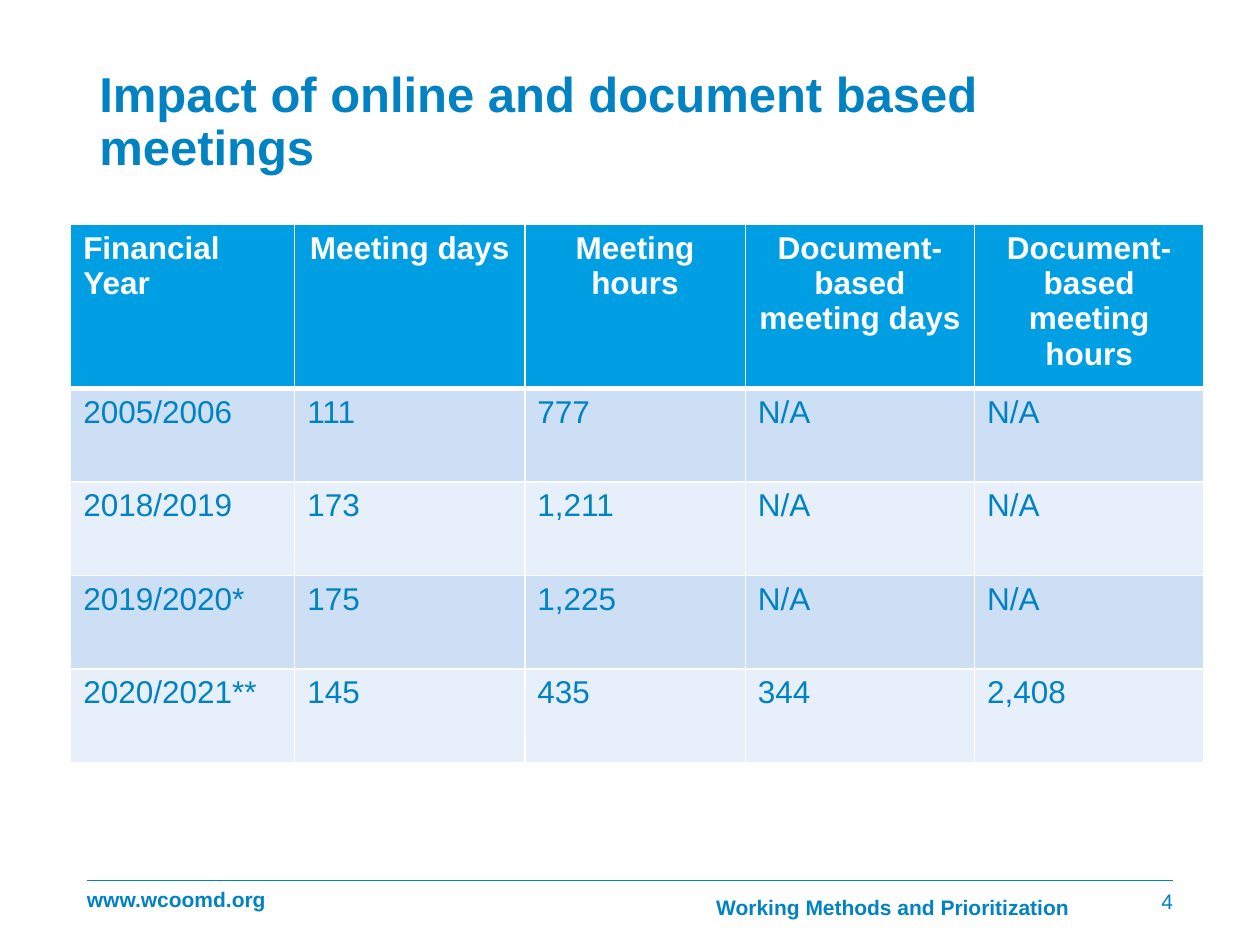
from lxml.etree import SubElement
from pptx import Presentation
from pptx.dml.color import RGBColor
from pptx.enum.shapes import MSO_CONNECTOR
from pptx.enum.text import MSO_ANCHOR, PP_ALIGN
from pptx.oxml.ns import qn
from pptx.util import Pt

BLUE = RGBColor(0x00, 0x82, 0xC3)
HEADER_BLUE = RGBColor(0x00, 0x9F, 0xE3)
BAND_DARK = RGBColor(0xCC, 0xDF, 0xF4)
BAND_LIGHT = RGBColor(0xE7, 0xF0, 0xFA)
WHITE = RGBColor(0xFF, 0xFF, 0xFF)

HEADINGS = ["Financial Year", "Meeting days", "Meeting hours",
            "Document-based meeting days", "Document-based meeting hours"]
YEARS = [
    ["2005/2006", "111", "777", "N/A", "N/A"],
    ["2018/2019", "173", "1,211", "N/A", "N/A"],
    ["2019/2020*", "175", "1,225", "N/A", "N/A"],
    ["2020/2021**", "145", "435", "344", "2,408"],
]
COLUMN_WIDTHS = [128, 131.5, 126, 131, 131]
HEADER_HEIGHT, YEAR_HEIGHT = 88, 53.5
FOOTER_TOP, FOOTER_HEIGHT = 500.4, 28.8


class MeetingSlide:
    def __init__(self, slide, font="Arial"):
        self.slide = slide
        self.font = font

    def add_words(self, frame, text, size, color=BLUE, bold=False, align=PP_ALIGN.LEFT):
        paragraph = frame.paragraphs[0]
        paragraph.alignment = align
        run = paragraph.add_run()
        run.text = text
        run.font.name, run.font.size, run.font.bold = self.font, Pt(size), bold
        run.font.color.rgb = color
        return paragraph

    def text(self, text, left, top, width, height, size, bold=True,
             align=PP_ALIGN.LEFT, anchor=MSO_ANCHOR.MIDDLE, margins=(0, 0), spacing=0.9):
        frame = self.slide.shapes.add_textbox(
            Pt(left), Pt(top), Pt(width), Pt(height)).text_frame
        frame.word_wrap = True
        frame.vertical_anchor = anchor
        frame.margin_left, frame.margin_right = map(Pt, margins)
        paragraph = self.add_words(frame, text, size, bold=bold, align=align)
        paragraph.line_spacing = spacing

    def rule(self, left, right, y):
        line = self.slide.shapes.add_connector(
            MSO_CONNECTOR.STRAIGHT, Pt(left), Pt(y), Pt(right), Pt(y))
        line.line.color.rgb = BLUE
        line.line.width = Pt(0.5)
        SubElement(line._element.spPr, qn("a:effectLst"))

    def borders(self, cell, top, bottom):
        """Draw white cell borders, with sides 1 pt wide."""
        properties = cell._tc.get_or_add_tcPr()
        for side, width in (("L", 1), ("R", 1), ("T", top), ("B", bottom)):
            border = SubElement(properties, qn(f"a:ln{side}"), w=str(Pt(width)))
            fill = SubElement(border, qn("a:solidFill"))
            SubElement(fill, qn("a:srgbClr"), val=str(WHITE))

    def table(self, left, top, headings, records):
        rows = [headings, *records]
        heights = [HEADER_HEIGHT] + [YEAR_HEIGHT] * len(records)
        table = self.slide.shapes.add_table(
            len(rows), len(headings), Pt(left), Pt(top),
            Pt(sum(COLUMN_WIDTHS)), Pt(sum(heights))).table
        for column, width in zip(table.columns, COLUMN_WIDTHS):
            column.width = Pt(width)
        for r, values in enumerate(rows):
            table.rows[r].height = Pt(heights[r])
            header = r == 0
            band = HEADER_BLUE if header else BAND_DARK if r % 2 else BAND_LIGHT
            for c, value in enumerate(values):
                cell = table.cell(r, c)
                self.borders(cell, top=3 if r == 1 else 1, bottom=3 if header else 1)
                cell.fill.solid()
                cell.fill.fore_color.rgb = band
                self.add_words(cell.text_frame, value, 18, WHITE if header else BLUE, header,
                               PP_ALIGN.CENTER if header and c else PP_ALIGN.LEFT)


def main():
    deck = Presentation()
    deck.slide_width, deck.slide_height = Pt(720), Pt(540)
    page = MeetingSlide(deck.slides.add_slide(deck.slide_layouts[6]))

    page.rule(49.7, 670.3, 503.3)
    page.text("www.wcoomd.org", 49.7, FOOTER_TOP, 105, FOOTER_HEIGHT, 12)
    page.text("Impact of online and document based meetings", 49.7, 36.7, 561.6, 63.4, 28,
              anchor=MSO_ANCHOR.TOP, margins=(7.2, 7.2))
    page.text("4", 625, FOOTER_TOP, 45.3, FOOTER_HEIGHT, 12, bold=False,
              align=PP_ALIGN.RIGHT, margins=(7.2, 0), spacing=1.0)
    page.text("Working Methods and Prioritization", 244, FOOTER_TOP, 367, FOOTER_HEIGHT, 12,
              align=PP_ALIGN.RIGHT, anchor=MSO_ANCHOR.BOTTOM, margins=(7.2, 0))
    page.table(40.4, 128.2, HEADINGS, YEARS)

    deck.save("out.pptx")


if __name__ == "__main__":
    main()
